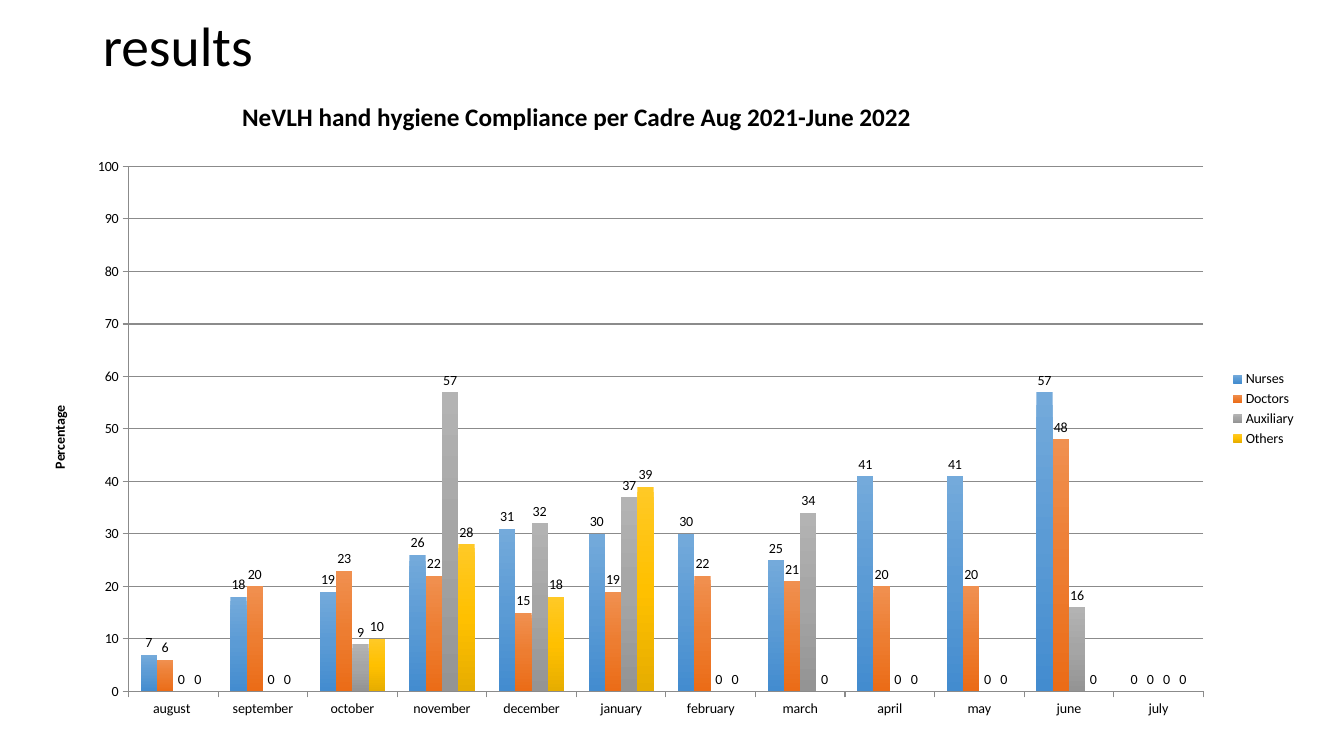
from copy import deepcopy
from lxml import etree
from pptx import Presentation
from pptx import util as u
from pptx.chart.data import CategoryChartData
from pptx.dml.color import RGBColor
from pptx.enum import chart as ch, text
from pptx.oxml.ns import qn

# Content
HEADING = "results"
CHART_TITLE = " NeVLH hand hygiene Compliance per Cadre Aug 2021-June 2022"
AXIS_TITLE = "Percentage"
MONTHS = ["august ", "september", "october", "november", "december", "january",
          "february", "march", "april", "may", "june", "july"]
CADRES = {
    "Nurses": (7, 18, 19, 26, 31, 30, 30, 25, 41, 41, 57, 0),
    "Doctors": (6, 20, 23, 22, 15, 19, 22, 21, 20, 20, 48, 0),
    "Auxiliary": (0, 0, 9, 57, 32, 37, 0, 34, 0, 0, 16, 0),
    "Others": (0, 0, 10, 28, 18, 39, 0, 0, 0, 0, 0, 0),
}

# Theme
THEME = {
    "font": "Calibri", "ink": "000000", "line": "8B8B8B",
    "heading": 39.6, "chart_title": 18, "small": 10,
    "series": ("5B9BD5", "ED7D31", "A5A5A5", "FFC000"),
    "shading": (0.15, 0, -0.1),
}

# Places: inches on the slide, then percentages of the chart's own frame
WIDTH, HEIGHT = 13.33, 7.5
HEADING_AT = (0.92, 0.11, 11.5, 0.74)
CHART_AT = (0.3, 0.86, 12.66, 6.39)
PLOT_AT = {"x": 7.7, "y": 12.4, "w": 84.2, "h": 81.5}
CHART_TITLE_AT = {"x": 15.8, "y": 1.2}
AXIS_TITLE_AT = {"x": 1.4, "y": 49.1}


def color(name):
    return RGBColor.from_string(THEME.get(name, name))


def set_font(font, size, bold=False):
    values = {"name": THEME["font"], "size": u.Pt(THEME[size]), "bold": bold}
    for key, value in values.items():
        setattr(font, key, value)
    font.color.rgb = color("ink")


def set_line(line):
    line.color.rgb = color("line")
    line.width = u.Pt(0.75)


def place(part, shares, target=None):
    """Give a chart part a fixed place within the chart frame."""
    layout = part.find(qn("c:layout"))
    if layout is None:
        layout = etree.Element(qn("c:layout"))
        part.insert(0 if part.find(qn("c:tx")) is None else 1, layout)
    manual = etree.SubElement(layout, qn("c:manualLayout"))
    settings = {"layoutTarget": target} if target else {}
    settings.update({"xMode": "edge", "yMode": "edge"})
    settings.update({key: share / 100 for key, share in shares.items()})
    for key, value in settings.items():
        etree.SubElement(manual, qn("c:" + key)).set("val", str(value))


def write_title(title, words, size, shares):
    para = title.text_frame.paragraphs[0]
    span = para.add_run()
    span.text = words
    set_font(span.font, size, bold=True)
    place(title._element, shares)


def shade(series, base):
    """Fill bars from a lighter top to a darker foot."""
    fill = series.format.fill
    fill.gradient()
    fill.gradient_angle = 270
    first = next(series._element.iter(qn("a:gs")))
    middle = deepcopy(first)
    middle.set("pos", "50000")
    first.addnext(middle)
    for stop, brightness in zip(fill.gradient_stops, THEME["shading"]):
        stop.color.rgb = color(base)
        stop.color.brightness = brightness


deck = Presentation()
deck.slide_width, deck.slide_height = u.Inches(WIDTH), u.Inches(HEIGHT)
page = deck.slides.add_slide(deck.slide_layouts[5])

# Heading
box = page.shapes.title
box.left, box.top, box.width, box.height = map(u.Inches, HEADING_AT)
frame = box.text_frame
frame.text = HEADING
for key, value in {"vertical_anchor": text.MSO_ANCHOR.MIDDLE, "word_wrap": True,
                   "auto_size": text.MSO_AUTO_SIZE.NONE}.items():
    setattr(frame, key, value)
para = frame.paragraphs[0]
para.alignment, para.line_spacing = text.PP_ALIGN.LEFT, 0.9
set_font(para.runs[0].font, "heading")

# Chart
data = CategoryChartData(number_format="0")
data.categories = MONTHS
for cadre, values in CADRES.items():
    data.add_series(cadre, values)
chart = page.shapes.add_chart(ch.XL_CHART_TYPE.COLUMN_CLUSTERED,
                              *map(u.Inches, CHART_AT), data).chart
set_font(chart.font, "small")
write_title(chart.chart_title, CHART_TITLE, "chart_title", CHART_TITLE_AT)
chart.chart_title.include_in_layout = False
place(chart._chartSpace.chart.plotArea, PLOT_AT, "inner")

# Legend
chart.has_legend = True
chart.legend.position = ch.XL_LEGEND_POSITION.RIGHT
chart.legend.include_in_layout = False
set_font(chart.legend.font, "small")

# Axes
months, percent = chart.category_axis, chart.value_axis
for axis, number_format in ((months, "General"), (percent, "#,##0")):
    axis.major_tick_mark = ch.XL_TICK_MARK.OUTSIDE
    axis.minor_tick_mark = ch.XL_TICK_MARK.NONE
    axis.tick_labels.number_format = number_format
    axis.tick_labels.number_format_is_linked = False
    set_font(axis.tick_labels.font, "small")
    set_line(axis.format.line)
for key, value in {"minimum_scale": 0, "maximum_scale": 100, "major_unit": 10,
                   "has_major_gridlines": True}.items():
    setattr(percent, key, value)
set_line(percent.major_gridlines.format.line)
write_title(percent.axis_title, AXIS_TITLE, "small", AXIS_TITLE_AT)
turned = percent.axis_title._element.find(".//" + qn("a:bodyPr"))
turned.set("rot", "-5400000")
turned.set("vert", "horz")

# Bars and their values
plot = chart.plots[0]
plot.gap_width, plot.overlap, plot.vary_by_categories = 150, 0, False
for series, base in zip(plot.series, THEME["series"]):
    shade(series, base)
    labels = series.data_labels
    for key, value in {"show_value": True, "number_format": "0",
                       "number_format_is_linked": False,
                       "position": ch.XL_LABEL_POSITION.OUTSIDE_END}.items():
        setattr(labels, key, value)
    set_font(labels.font, "small")

deck.save("out.pptx")
